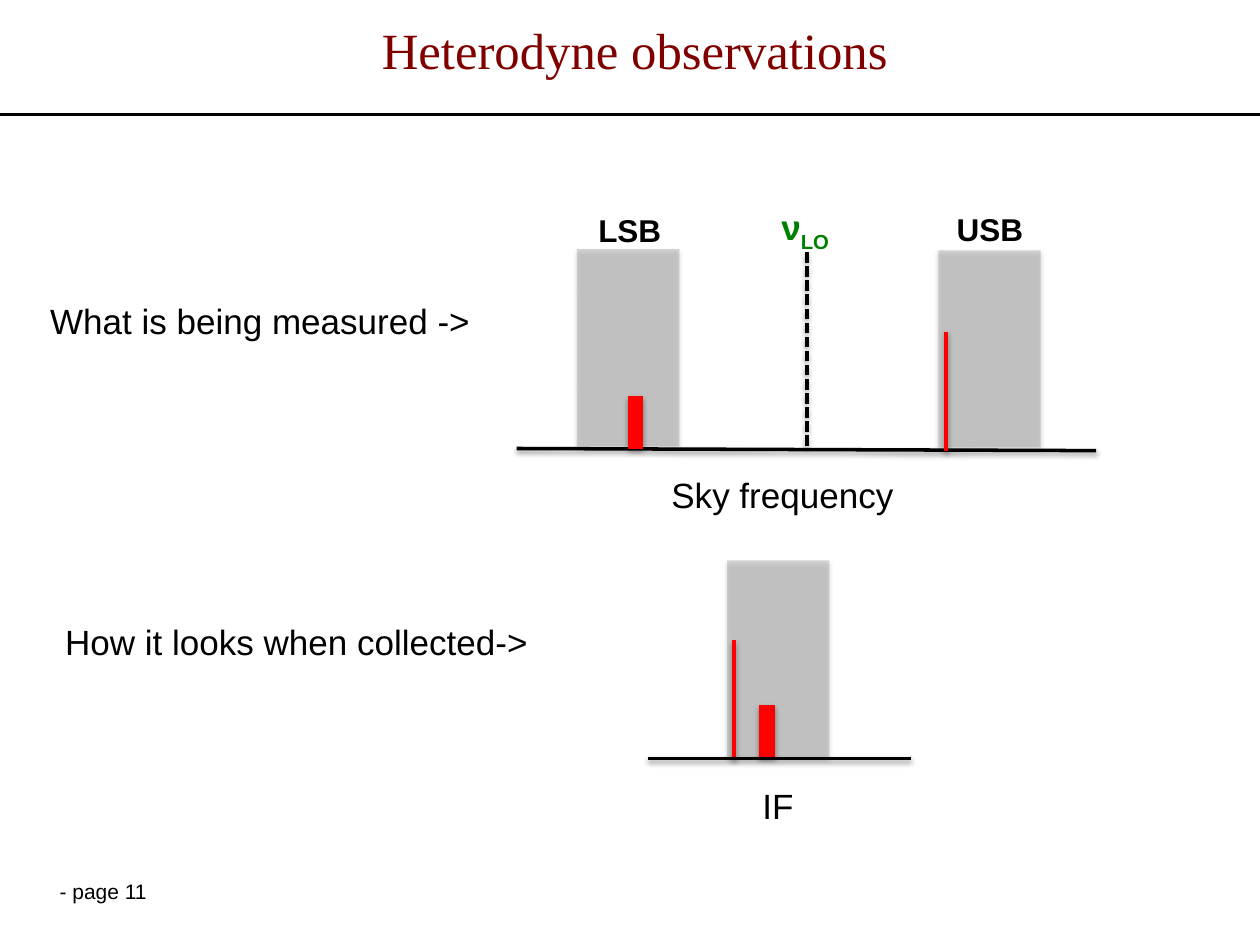
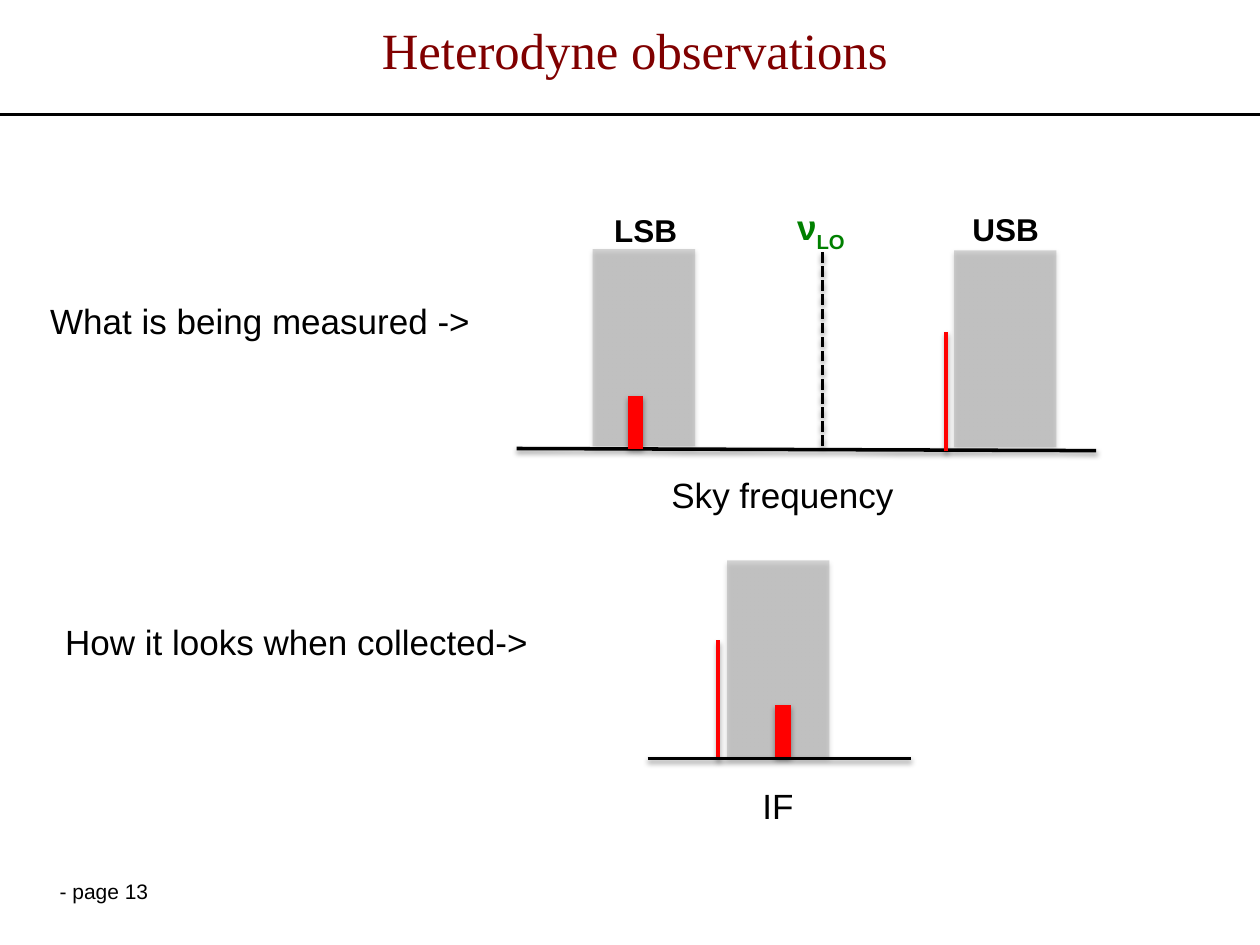
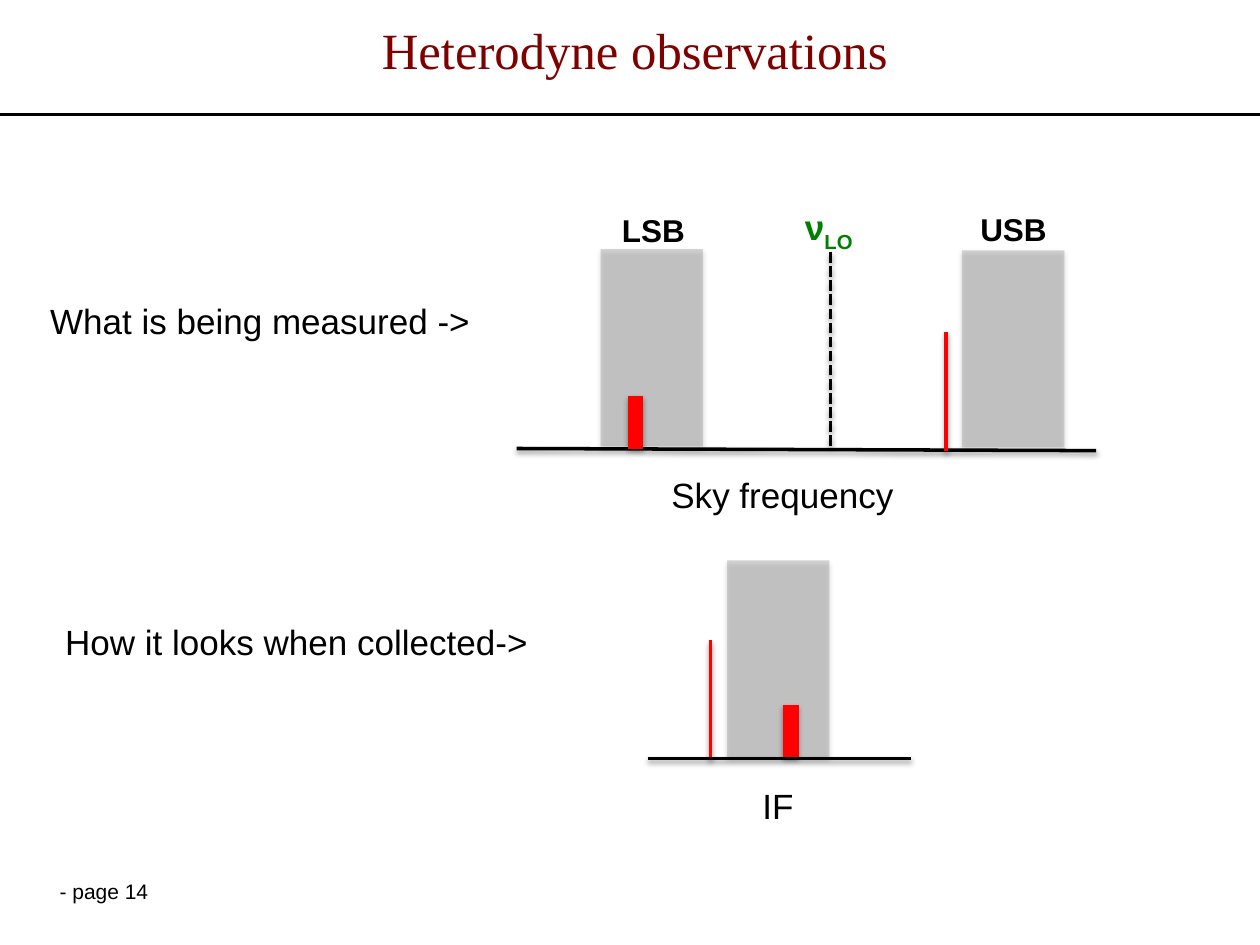
from lxml.etree import SubElement
from pptx import Presentation
from pptx.dml.color import RGBColor
from pptx.enum.dml import MSO_LINE
from pptx.enum.shapes import MSO_CONNECTOR, MSO_SHAPE
from pptx.enum.text import MSO_ANCHOR, MSO_AUTO_SIZE, PP_ALIGN
from pptx.oxml.ns import qn
from pptx.util import Pt

COLORS = {"ink": "000000", "title": "800000", "band": "A6A6A6",
          "signal": "FF0000", "oscillator": "008000"}
SANS, SERIF = "Arial", "Times New Roman"
SLIDE_WIDTH, SLIDE_HEIGHT = 720, 540

TITLE = "Heterodyne observations"
PAGES = [(11, 0), (13, 9), (14, 13.5)]

BAND_WIDTH, BAND_HEIGHT, BAND_OPACITY = 58.5, 112.5, 46
LSB_BAND, USB_BAND, IF_BAND = (329.7, 142.4), (536.2, 143), (415.5, 320.2)
OSCILLATOR = (461, 254.8, 142.6)
SIDEBAND_LABELS = [("LSB", (334.8, 117.2, 51, 29)), ("USB", (539.6, 116.7, 52.5, 29))]
OSCILLATOR_LABEL = (["ν", "LO"], (439.4, 113.8, 58.3, 31.5))

ROW_LABELS = [("What is being measured ->", (21.6, 167.8, 256.3, 31.5)),
              ("How it looks when collected->", (30.2, 351.2, 280.8, 31.5))]
SKY_LABEL = ("Sky frequency", (304.6, 267.1, 285.1, 31.5))
IF_LABEL = ("IF", (414, 445, 61.2, 31.5))

SKY_AXIS = (295.2, 256.3, 626.4, 257.5)
IF_AXIS = (370.1, 433.4, 520.6, 433.4)
BROAD, NARROW = 9, 2
SKY_BROAD, SKY_NARROW = (363.2, 256.5, 226.5), (540.7, 258, 189.6)
IF_BROAD, IF_NARROW = (438.3, 432.8, 403.1), (419.4, 434, 366)


def rgb(key):
    return RGBColor.from_string(COLORS[key])


def add_shadow(part, opacity, distance):
    properties = part._element.spPr
    effects = properties.find(qn("a:effectLst"))
    if effects is None:
        effects = SubElement(properties, qn("a:effectLst"))
    if opacity:
        shadow = SubElement(effects, qn("a:outerShdw"), blurRad=str(Pt(3.1)),
                            dist=str(Pt(distance)), dir="5400000", rotWithShape="0")
        color = SubElement(shadow, qn("a:srgbClr"), val=COLORS["ink"])
        SubElement(color, qn("a:alpha"), val=str(opacity * 1000))


def add_line(shapes, ends, width=2, color="ink", dash=None, shadow=38):
    line = shapes.add_connector(MSO_CONNECTOR.STRAIGHT, *map(Pt, ends))
    line.line.color.rgb = rgb(color)
    line.line.width = Pt(width)
    if dash:
        line.line.dash_style = dash
    add_shadow(line, shadow, 1.6)


def add_upright(shapes, place, shift=0, **style):
    x, bottom, top = place
    add_line(shapes, (x + shift, bottom, x + shift, top), **style)


def add_band(shapes, corner, shift=0):
    left, top = corner
    band = shapes.add_shape(MSO_SHAPE.RECTANGLE, Pt(left + shift), Pt(top),
                            Pt(BAND_WIDTH), Pt(BAND_HEIGHT))
    band.fill.solid()
    band.fill.fore_color.rgb = rgb("band")
    fill_color = band._element.spPr.find(".//" + qn("a:srgbClr"))
    SubElement(fill_color, qn("a:alpha"), val=str(BAND_OPACITY * 1000))
    band.line.fill.background()
    band.shadow.inherit = False
    add_shadow(band, 35, 1.8)


def add_text(shapes, pieces, box, shift=0, size=20, color="ink", font=SANS, bold=False,
             align=PP_ALIGN.LEFT, wrap=True, anchor=MSO_ANCHOR.TOP, grow=True):
    left, top, width, height = box
    label = shapes.add_textbox(Pt(left + shift), Pt(top), Pt(width), Pt(height))
    frame = label.text_frame
    frame.word_wrap = wrap
    frame.vertical_anchor = anchor
    frame.auto_size = MSO_AUTO_SIZE.SHAPE_TO_FIT_TEXT if grow else MSO_AUTO_SIZE.NONE
    paragraph = frame.paragraphs[0]
    paragraph.alignment = align
    for piece in pieces:
        run = paragraph.add_run()
        run.text = piece
        run.font.size = Pt(size)
        run.font.name = font
        run.font.bold = bold
        run.font.color.rgb = rgb(color)
    return paragraph


def add_frame(shapes, page):
    add_line(shapes, (0, 65.3, SLIDE_WIDTH, 65.3), 1.5, shadow=0)
    add_text(shapes, [f"- page {page}"], (27, 498.2, 72, 25.2), size=12, grow=False)
    add_text(shapes, [TITLE], (167.8, 0, 390.2, 56.2), size=29, color="title", font=SERIF,
             align=PP_ALIGN.CENTER, anchor=MSO_ANCHOR.MIDDLE, grow=False)


def add_receiver(shapes, shift):
    for corner in (LSB_BAND, USB_BAND):
        add_band(shapes, corner, shift)
    add_upright(shapes, OSCILLATOR, shift, dash=MSO_LINE.SQUARE_DOT)
    for name, box in SIDEBAND_LABELS:
        add_text(shapes, [name], box, shift, size=18, bold=True, wrap=False)
    pieces, box = OSCILLATOR_LABEL
    symbol = add_text(shapes, pieces, box, shift, color="oscillator", bold=True)
    symbol.runs[1]._r.get_or_add_rPr().set("baseline", "-25000")


def add_sky(shapes):
    add_line(shapes, SKY_AXIS)
    add_upright(shapes, SKY_BROAD, width=BROAD, color="signal")
    add_upright(shapes, SKY_NARROW, width=NARROW, color="signal")


def add_intermediate(shapes, shift):
    add_band(shapes, IF_BAND)
    add_upright(shapes, IF_BROAD, shift, width=BROAD, color="signal")
    add_upright(shapes, IF_NARROW, -shift, width=NARROW, color="signal")
    add_line(shapes, IF_AXIS)


def main():
    deck = Presentation()
    deck.slide_width, deck.slide_height = Pt(SLIDE_WIDTH), Pt(SLIDE_HEIGHT)
    for page, shift in PAGES:
        shapes = deck.slides.add_slide(deck.slide_layouts[6]).shapes
        add_frame(shapes, page)
        add_receiver(shapes.add_group_shape().shapes, shift)
        for words, box in ROW_LABELS:
            add_text(shapes, [words], box, wrap=False)
        add_sky(shapes.add_group_shape().shapes)
        add_intermediate(shapes, shift)
        for words, box in (IF_LABEL, SKY_LABEL):
            add_text(shapes, [words], box, align=PP_ALIGN.CENTER)
    deck.save("out.pptx")


if __name__ == "__main__":
    main()
